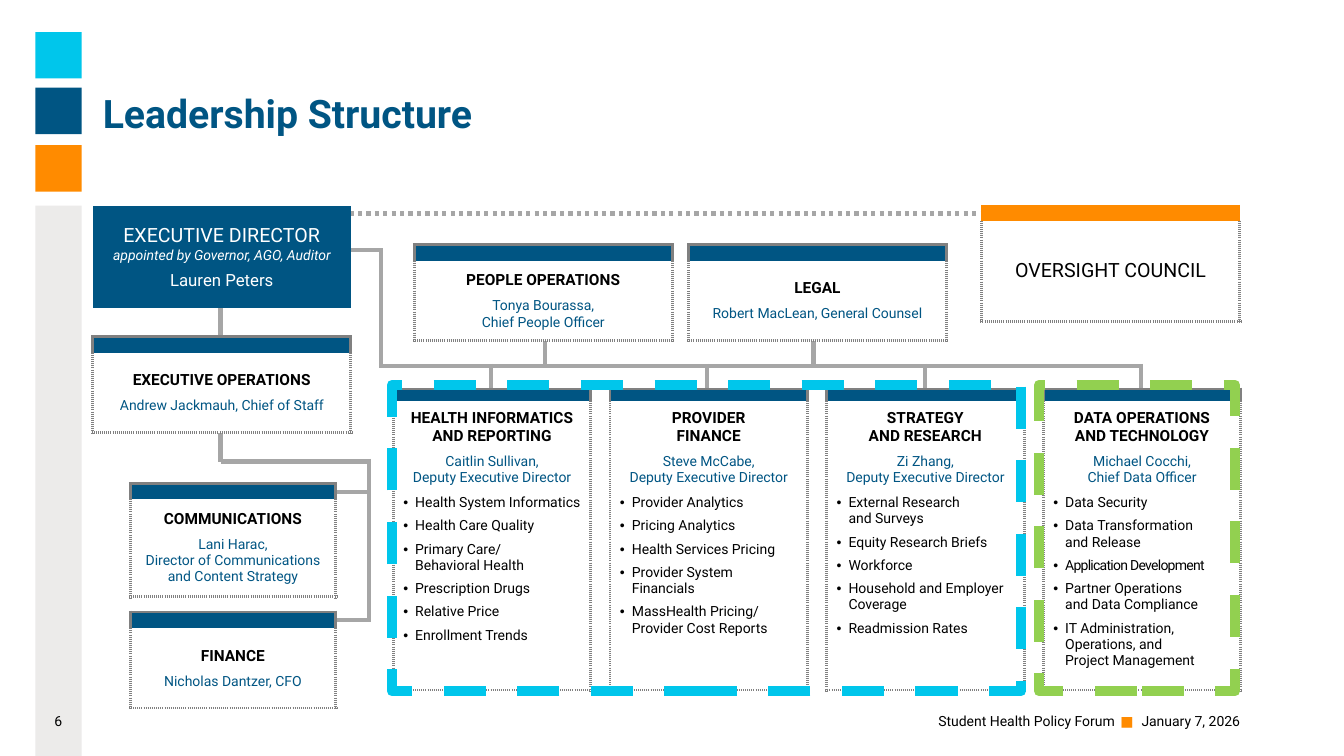
from dataclasses import dataclass

from lxml import etree
from pptx import Presentation
from pptx.dml.color import RGBColor
from pptx.enum.dml import MSO_LINE
from pptx.enum.shapes import MSO_CONNECTOR, MSO_SHAPE
from pptx.enum.text import MSO_ANCHOR, PP_ALIGN
from pptx.oxml.ns import qn
from pptx.util import Cm, Pt

MIDDLE, TOP, BOTTOM = MSO_ANCHOR.MIDDLE, MSO_ANCHOR.TOP, MSO_ANCHOR.BOTTOM
LEFT, CENTER, RIGHT = PP_ALIGN.LEFT, PP_ALIGN.CENTER, PP_ALIGN.RIGHT
DASH, DOT = MSO_LINE.DASH, MSO_LINE.ROUND_DOT
RECT, STRAIGHT = MSO_SHAPE.RECTANGLE, MSO_CONNECTOR.STRAIGHT

FONT = "Roboto"
BLUE, CYAN, ORANGE, GREEN = "005583", "00C6EB", "FF8B00", "92D050"
BLACK, WHITE, PALE, GREY, EDGE = "000000", "FFFFFF", "ECEBEA", "A6A6A6", "808080"
MARGIN = 2.34
COLUMN_LEFT, COLUMN_PITCH, COLUMN_TOP, COLUMN_WIDTH = 9.91, 5.46, 9.8, 4.98
TRUNK_Y = 9.22


@dataclass
class Unit:
    """A box with a coloured header band, a name and its head."""
    name: str
    head: str
    left: float
    top: float
    width: float = 6.5
    band: float = 0.41
    body: float = 2.01
    items: tuple[str, ...] = ()


@dataclass
class Line:
    x1: float
    y1: float
    x2: float
    y2: float
    dash: object = None


def rgb(color: str) -> RGBColor:
    return RGBColor.from_string(color)


def add_text(p, text: str, size: float, color: str, spacing: int = 0, **formats) -> None:
    for i, part in enumerate(text.split("\n")):
        if i:
            p.add_line_break()
        r = p.add_run()
        r.text = part
        for key, value in {"name": FONT, "size": Pt(size), **formats}.items():
            setattr(r.font, key, value)
        r.font.color.rgb = rgb(color)
        if spacing:
            r._r.get_or_add_rPr().set("spc", str(spacing))


def next_paragraph(tf, align=CENTER, after: float = 0):
    p = tf.paragraphs[0] if not tf.paragraphs[0].runs else tf.add_paragraph()
    p.alignment, p.space_after = align, Pt(after)
    return p


def add_bullet(p) -> None:
    pPr = p._p.get_or_add_pPr()
    pPr.set("marL", str(Cm(0.3)))
    pPr.set("indent", str(-Cm(0.3)))
    etree.SubElement(pPr, qn("a:buFont")).set("typeface", "Arial")
    etree.SubElement(pPr, qn("a:buChar")).set("char", "•")


def set_frame(tf, anchor, **margins) -> None:
    values = {"word_wrap": True, "vertical_anchor": anchor, **margins}
    for key, value in values.items():
        setattr(tf, key, value)


def add_rect(s, left: float, top: float, width: float, height: float,
             fill: str = "", outline: str = ""):
    sp = s.shapes.add_shape(RECT, Cm(left), Cm(top), Cm(width), Cm(height))
    sp.shadow.inherit = False
    if fill:
        sp.fill.solid()
        sp.fill.fore_color.rgb = rgb(fill)
        sp.line.fill.background()
    else:
        sp.fill.background()
        sp.line.color.rgb = rgb(outline)
        sp.line.width, sp.line.dash_style = Pt(7.5), DASH
    return sp


def add_line(s, line: Line) -> None:
    cx = s.shapes.add_connector(STRAIGHT, Cm(line.x1), Cm(line.y1), Cm(line.x2), Cm(line.y2))
    cx.line.color.rgb, cx.line.width = rgb(GREY), Pt(3)
    if line.dash:
        cx.line.dash_style = line.dash
    etree.SubElement(cx._element.spPr, qn("a:effectLst"))


def format_cell(cell, fill: str, sides: str = "", color: str = EDGE,
                width: float = 2.25, dash: str = "solid") -> None:
    tcPr = cell._tc.get_or_add_tcPr()
    for side in "LRTB":
        ln = etree.SubElement(tcPr, qn(f"a:ln{side}"), w=str(Pt(width)))
        if side in sides:
            solid = etree.SubElement(ln, qn("a:solidFill"))
            etree.SubElement(solid, qn("a:srgbClr"), val=color)
            etree.SubElement(ln, qn("a:prstDash"), val=dash)
        else:
            etree.SubElement(ln, qn("a:noFill"))
    cell.fill.solid()
    cell.fill.fore_color.rgb = rgb(fill)


def add_box(s, left: float, top: float, width: float, heights: list[float]):
    frame = s.shapes.add_table(len(heights), 1, Cm(left), Cm(top), Cm(width), Cm(sum(heights)))
    table = frame.table
    table.first_row = table.horz_banding = False
    for row, height in zip(table.rows, heights):
        row.height = Cm(height)
    return table


def add_banded_box(s, left: float, top: float, width: float, heights: list[float],
                   color: str = BLUE, edge: str = EDGE, edge_width: float = 2.25):
    table = add_box(s, left, top, width, heights)
    band, body = table.cell(0, 0), table.cell(1, 0)
    format_cell(band, color, "LRT", edge, edge_width)
    band.margin_top = band.margin_bottom = 0
    etree.SubElement(band.text_frame.paragraphs[0]._p, qn("a:endParaRPr"), sz="100")
    format_cell(body, WHITE, "LRB", dash="sysDot")
    body.vertical_anchor = MIDDLE
    return body


def add_unit(s, unit: Unit) -> None:
    body = add_banded_box(s, unit.left, unit.top, unit.width, [unit.band, unit.body])
    tf = body.text_frame
    add_text(next_paragraph(tf, after=6), unit.name, 11, BLACK, bold=True)
    add_text(next_paragraph(tf, after=6), unit.head, 10, BLUE)
    if unit.items:
        body.vertical_anchor, body.margin_top = TOP, Cm(0.21)
    for item in unit.items:
        p = next_paragraph(tf, LEFT, 5)
        add_bullet(p)
        add_text(p, item, 10, BLACK, -50 if item == "Application Development" else 0)


DIVISIONS = [
    ("HEALTH INFORMATICS AND REPORTING", "Caitlin Sullivan,\nDeputy Executive Director",
     ("Health System Informatics", "Health Care Quality", "Primary Care/\nBehavioral Health",
      "Prescription Drugs", "Relative Price", "Enrollment Trends")),
    ("PROVIDER\nFINANCE", "Steve McCabe,\nDeputy Executive Director",
     ("Provider Analytics", "Pricing Analytics", "Health Services Pricing",
      "Provider System Financials", "MassHealth Pricing/\nProvider Cost Reports")),
    ("STRATEGY\nAND RESEARCH", "Zi Zhang,\nDeputy Executive Director",
     ("External Research\nand Surveys", "Equity Research Briefs", "Workforce",
      "Household and Employer Coverage", "Readmission Rates")),
    ("DATA OPERATIONS\nAND TECHNOLOGY", "Michael Cocchi,\nChief Data Officer",
     ("Data Security", "Data Transformation\nand Release", "Application Development",
      "Partner Operations\nand Data Compliance",
      "IT Administration, Operations, and\nProject Management")),
]
UNITS = [Unit(name, head, COLUMN_LEFT + i * COLUMN_PITCH, COLUMN_TOP, COLUMN_WIDTH, 0.3, 7.29, items)
         for i, (name, head, items) in enumerate(DIVISIONS)] + [
    Unit("COMMUNICATIONS", "Lani Harac,\nDirector of Communications and Content Strategy",
         3.28, 12.19, 5.18, 0.38, 2.46),
    Unit("FINANCE", "Nicholas Dantzer, CFO", 3.28, 15.42, 5.18),
    Unit("LEGAL", "Robert MacLean, General Counsel", 17.35, 6.17),
    Unit("PEOPLE OPERATIONS", "Tonya Bourassa,\nChief People Officer", 10.44, 6.17),
    Unit("EXECUTIVE OPERATIONS", "Andrew Jackmauh, Chief of Staff", MARGIN, 8.48),
]
LINES = [
    Line(5.56, 7.47, 5.56, 8.46), Line(5.56, 10.16, 5.56, 11.63),
    Line(5.56, 11.63, 9.27, 11.63), Line(9.3, 11.56, 9.3, 15.62),
    Line(8.26, 12.4, 9.3, 12.4), Line(8.2, 15.62, 9.35, 15.62),
    Line(8.81, 6.3, 9.65, 6.3), Line(9.6, 6.3, 9.6, 9.27),
    Line(9.6, TRUNK_Y, 28.75, TRUNK_Y), Line(8.81, 5.38, 25.27, 5.38, DOT),
    *(Line(x, 8.26, x, TRUNK_Y) for x in (13.74, 20.5)),
    *(Line(x, 9.17, x, 9.85) for x in (12.37, 17.81, 23.32, 28.75)),
]


def main() -> None:
    prs = Presentation()
    prs.slide_width, prs.slide_height = Cm(33.87), Cm(19.05)
    s = prs.slides.add_slide(prs.slide_layouts[5])

    # Side strip
    for top, height, color in ((5.18, 13.87, PALE), (3.66, 1.17, ORANGE),
                               (2.21, 1.17, BLUE), (0.81, 1.17, CYAN)):
        add_rect(s, 0.89, top, 1.17, height, color)

    # Title
    title = s.shapes.title
    title.left, title.top, title.width, title.height = Cm(MARGIN), Cm(0.86), Cm(28.91), Cm(2.59)
    set_frame(title.text_frame, BOTTOM, margin_left=Cm(0.25), margin_right=0, margin_bottom=0)
    p = next_paragraph(title.text_frame, LEFT)
    p.line_spacing = 0.9
    add_text(p, "Leadership Structure", 28, BLUE, bold=True)

    # Footer and slide number
    footer = s.shapes.add_textbox(Cm(MARGIN), Cm(17.65), Cm(28.91), Cm(1.02))
    set_frame(footer.text_frame, MIDDLE, margin_right=0)
    p = next_paragraph(footer.text_frame, RIGHT)
    add_text(p, "Student Health Policy Forum", 10, BLACK)
    add_text(p, " ■ ", 10, ORANGE, 160)
    add_text(p, "January 7, 2026", 10, BLACK)
    number = s.shapes.add_textbox(Cm(0.91), Cm(17.83), Cm(1.12), Cm(0.69))
    set_frame(number.text_frame, MIDDLE)
    add_text(next_paragraph(number.text_frame), "6", 10, BLACK)

    # Reporting lines
    for line in LINES:
        add_line(s, line)

    # Executive director
    cell = add_box(s, MARGIN, 5.18, 6.5, [2.59]).cell(0, 0)
    format_cell(cell, BLUE)
    cell.vertical_anchor = MIDDLE
    p = next_paragraph(cell.text_frame)
    add_text(p, "EXECUTIVE DIRECTOR\n", 14, WHITE)
    add_text(p, "appointed by Governor, AGO, Auditor", 10, WHITE, italic=True)
    p = next_paragraph(cell.text_frame)
    p.space_before = Pt(5)
    add_text(p, "Lauren Peters", 12, WHITE)

    # Oversight council
    body = add_banded_box(s, 24.74, 5.18, 6.5, [0.38, 2.54], ORANGE, ORANGE, 1)
    add_text(next_paragraph(body.text_frame), "OVERSIGHT COUNCIL", 14, BLACK)

    # Units and the dashed groups around them
    for unit in UNITS:
        add_unit(s, unit)
    add_rect(s, 9.88, 9.7, 15.85, 7.72, outline=CYAN)
    add_rect(s, 26.19, 9.7, 4.93, 7.72, outline=GREEN)

    prs.save("out.pptx")


if __name__ == "__main__":
    main()
